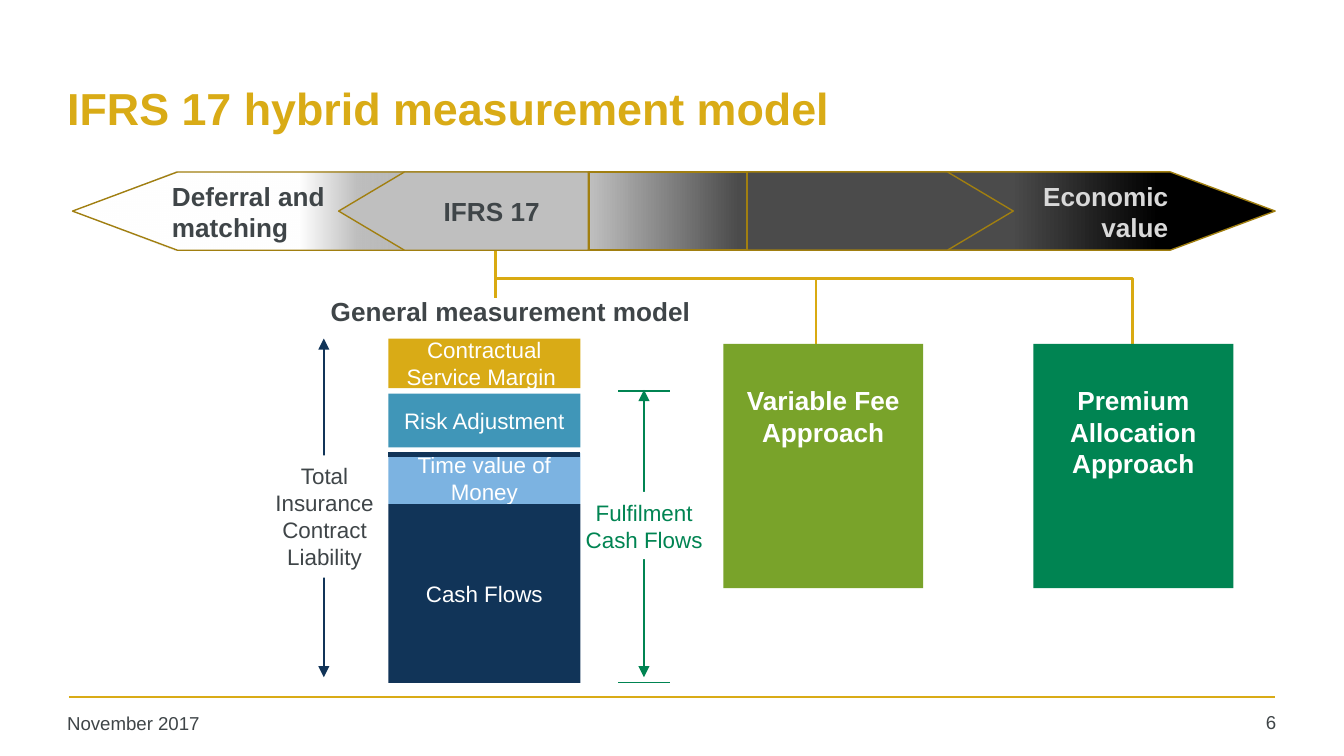
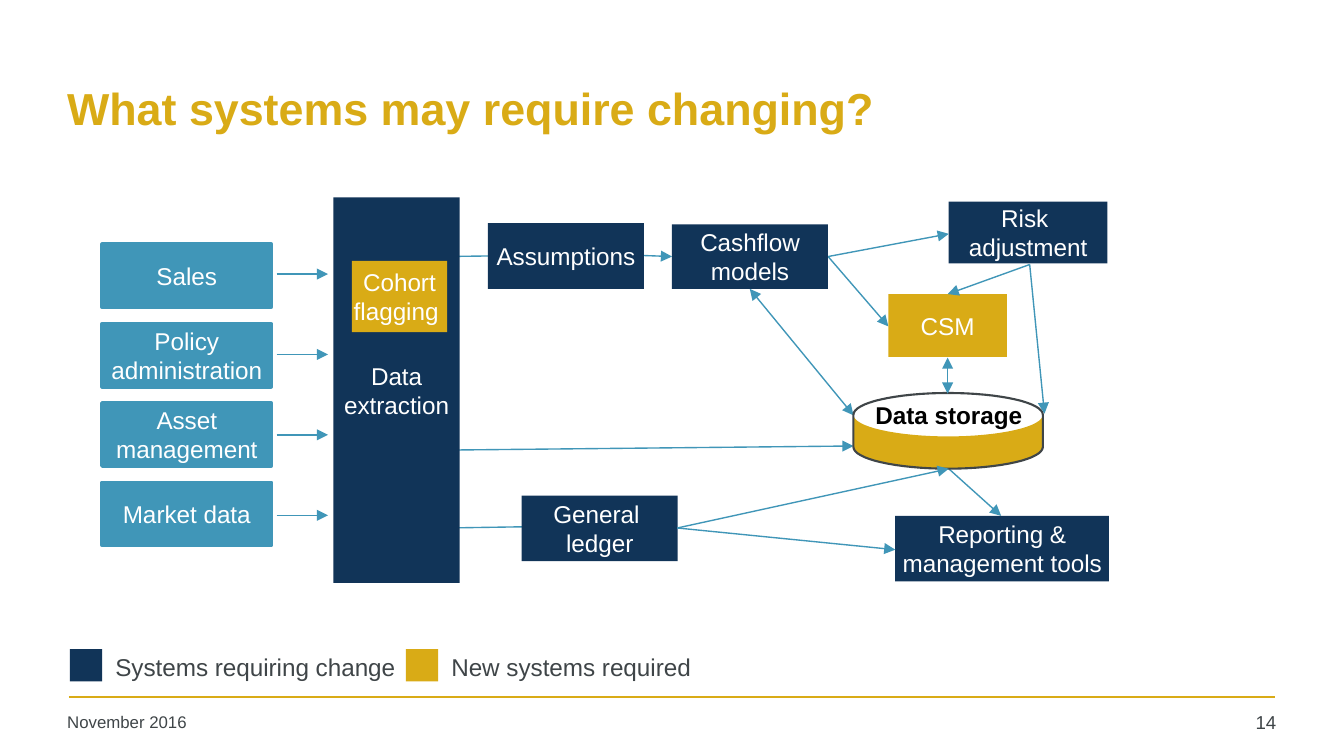
import math
from dataclasses import dataclass
from typing import Optional

from lxml import etree
from pptx import Presentation
from pptx.dml.color import RGBColor
from pptx.enum.shapes import MSO_CONNECTOR, MSO_SHAPE
from pptx.enum.text import MSO_ANCHOR, PP_ALIGN
from pptx.oxml.ns import qn
from pptx.util import Cm, Pt

RECT, PLATE = MSO_SHAPE.RECTANGLE, MSO_SHAPE.PENTAGON
STRAIGHT, ELBOW = MSO_CONNECTOR.STRAIGHT, MSO_CONNECTOR.ELBOW
LEFT, CENTER, RIGHT = PP_ALIGN.LEFT, PP_ALIGN.CENTER, PP_ALIGN.RIGHT
TOP, MIDDLE = MSO_ANCHOR.TOP, MSO_ANCHOR.MIDDLE

GOLD = RGBColor(0xD9, 0xAB, 0x16)
BRANCH_GOLD = RGBColor(0xD9, 0xAA, 0x11)
DARK_GOLD = RGBColor(0xA1, 0x7F, 0x10)
NAVY = RGBColor(0x11, 0x34, 0x58)
BLUE = RGBColor(0x40, 0x96, 0xB8)
LIGHT_BLUE = RGBColor(0x7C, 0xB3, 0xE1)
LIME = RGBColor(0x79, 0xA3, 0x2A)
GREEN = RGBColor(0x00, 0x84, 0x52)
SLATE = RGBColor(0x3F, 0x45, 0x48)
CHARCOAL = RGBColor(0x4B, 0x4B, 0x4B)
GREY = RGBColor(0x80, 0x80, 0x80)
SILVER = RGBColor(0xBF, 0xBF, 0xBF)
PALE_GREY = RGBColor(0xD9, 0xD9, 0xD9)
WHITE = RGBColor(0xFF, 0xFF, 0xFF)
BLACK = RGBColor(0x00, 0x00, 0x00)

FONT = "Arial"


@dataclass(frozen=True)
class Style:
    """Text look; insets are left, top, right, bottom in cm."""
    size: float
    color: RGBColor
    bold: bool = False
    align: PP_ALIGN = CENTER
    anchor: MSO_ANCHOR = TOP
    insets: tuple = (0.25, 0.13, 0.25, 0.13)


@dataclass(frozen=True)
class Box:
    """A rectangle or, without a fill, a text box; lengths in cm."""
    left: float
    top: float
    width: float
    height: float
    text: str = ""
    style: Optional[Style] = None
    fill: Optional[RGBColor] = None
    line: Optional[RGBColor] = None


@dataclass(frozen=True)
class Link:
    """A straight line in cm, with optional arrowheads."""
    x1: float
    y1: float
    x2: float
    y2: float
    color: RGBColor = BLUE
    weight: float = 0.75
    head: bool = False
    tail: bool = True


@dataclass(frozen=True)
class Plate:
    """One section of the spectrum arrow; a point of 0 gives a rectangle."""
    left: float
    width: float
    stops: tuple
    point: float = 0
    flipped: bool = False


EDGE = (0.18, 0.1, 0.18, 0.1)
FLUSH = (0, 0, 0, 0)
TITLE = Style(24, GOLD, True, LEFT, MIDDLE, EDGE)
PAGE = Style(10, SLATE, align=RIGHT, insets=EDGE)
HEADING = Style(14, SLATE, True)
HEADING_LEFT = Style(14, SLATE, True, LEFT)
HEADING_PALE = Style(14, PALE_GREY, True, RIGHT)
APPROACH = Style(14, WHITE, True)
LAYER = Style(12, WHITE, anchor=MIDDLE)
SYSTEM = Style(13, WHITE, anchor=MIDDLE, insets=FLUSH)
STORAGE = Style(13, BLACK, True, CENTER, MIDDLE, (0, 0, 0, 0.89))
LEGEND = Style(13, SLATE, align=LEFT)


def write(shape, text: str, style: Style) -> None:
    frame = shape.text_frame
    frame.text = text
    frame.word_wrap = True
    frame.vertical_anchor = style.anchor
    (frame.margin_left, frame.margin_top,
     frame.margin_right, frame.margin_bottom) = map(Cm, style.insets)
    for paragraph in frame.paragraphs:
        paragraph.alignment = style.align
        for run in paragraph.runs:
            run.font.name = FONT
            run.font.size = Pt(style.size)
            run.font.bold = style.bold
            run.font.color.rgb = style.color


def paint(shape, fill: Optional[RGBColor], line: Optional[RGBColor], weight: float) -> None:
    shape.shadow.inherit = False
    if fill is None:
        shape.fill.background()
    else:
        shape.fill.solid()
        shape.fill.fore_color.rgb = fill
    if line is None:
        shape.line.fill.background()
    else:
        shape.line.color.rgb = line
        shape.line.width = Pt(weight)


def draw_box(slide, box: Box) -> None:
    area = [Cm(v) for v in (box.left, box.top, box.width, box.height)]
    if box.fill is None:
        shape = slide.shapes.add_textbox(*area)
    else:
        shape = slide.shapes.add_shape(RECT, *area)
        paint(shape, box.fill, box.line, 2)
    if box.style:
        write(shape, box.text, box.style)


def draw_boxes(slide, boxes: list[Box]) -> None:
    for box in boxes:
        draw_box(slide, box)


def style_connector(connector, color: RGBColor, weight: float) -> None:
    connector.line.color.rgb = color
    connector.line.width = Pt(weight)
    etree.SubElement(connector._element.spPr, qn("a:effectLst"))


def draw_links(slide, links: list[Link]) -> None:
    for link in links:
        connector = slide.shapes.add_connector(
            STRAIGHT, Cm(link.x1), Cm(link.y1), Cm(link.x2), Cm(link.y2))
        style_connector(connector, link.color, link.weight)
        outline = connector.line._get_or_add_ln()
        for shown, tag in ((link.head, "a:headEnd"), (link.tail, "a:tailEnd")):
            if shown:
                etree.SubElement(outline, qn(tag), type="triangle")


def draw_branch(slide, x1: float, y1: float, x2: float, y2: float, bend: int) -> None:
    """Elbow that leaves downwards, runs across and goes down again."""
    cx, cy = (x1 + x2) / 2, (y1 + y2) / 2
    dx, dy = (y2 - y1) / 2, (x2 - x1) / 2
    connector = slide.shapes.add_connector(
        ELBOW, Cm(cx + dx), Cm(cy - dy), Cm(cx - dx), Cm(cy + dy))
    style_connector(connector, BRANCH_GOLD, 1.5)
    properties = connector._element.spPr
    properties.find(qn("a:xfrm")).set("rot", str(270 * 60000))
    adjustments = properties.find(qn("a:prstGeom")).find(qn("a:avLst"))
    etree.SubElement(adjustments, qn("a:gd"), name="adj1", fmla=f"val {bend}")


def set_gradient(shape, stops: tuple) -> None:
    """Each stop is position, colour and opacity, both in percent."""
    shape.fill.gradient()
    shape.fill.gradient_angle = 180
    stop_list = shape._element.spPr.find(".//" + qn("a:gsLst"))
    for default_stop in list(stop_list):
        stop_list.remove(default_stop)
    for position, color, opacity in stops:
        stop = etree.SubElement(stop_list, qn("a:gs"), pos=str(position * 1000))
        rgb = etree.SubElement(stop, qn("a:srgbClr"), val=str(color))
        if opacity < 100:
            etree.SubElement(rgb, qn("a:alpha"), val=str(opacity * 1000))


def draw_plate(slide, plate: Plate) -> None:
    shape = slide.shapes.add_shape(PLATE if plate.point else RECT, Cm(plate.left),
                                   Cm(3.25), Cm(plate.width), Cm(1.48))
    paint(shape, plate.stops[0][1], DARK_GOLD, 0.75)
    if len(plate.stops) > 1:
        set_gradient(shape, plate.stops)
    if plate.point:
        shape.adjustments[0] = plate.point
    if plate.flipped:
        shape.rotation = 180


def draw_drum(slide) -> None:
    """Data storage cylinder: a filled front and an outline around it all."""
    cx, rx, ry, rim, base = 17.92, 1.79, 0.41, 7.84, 8.45
    steps = 32

    def arc(cy: float, start: float, end: float) -> list:
        angles = [start + (end - start) * i / steps for i in range(steps + 1)]
        return [(Cm(cx + rx * math.cos(a)), Cm(cy + ry * math.sin(a))) for a in angles]

    front = arc(base, math.pi, 0)
    for points, fill, line in ((front + arc(rim, 0, math.pi), GOLD, None),
                               (arc(rim, 0, -math.pi) + front, None, SLATE)):
        builder = slide.shapes.build_freeform(*points[0])
        builder.add_line_segments(points[1:], close=True)
        paint(builder.convert_to_shape(), fill, line, 1.13)
    draw_box(slide, Box(16.23, 7.47, 3.4, 1.65, "Data storage", STORAGE))


def add_page(deck, title: str, date: str, date_size: float, number: str):
    slide = deck.slides.add_slide(deck.slide_layouts[6])
    draw_links(slide, [Link(1.3, 13.18, 24.1, 13.18, GOLD, 1, tail=False)])
    draw_boxes(slide, [
        Box(1.09, 0.84, 23.04, 2.39, title, TITLE),
        Box(1.09, 13.36, 5.59, 0.69, date, Style(date_size, SLATE, align=LEFT, insets=EDGE)),
        Box(22.5, 13.34, 1.8, 0.71, number, PAGE),
    ])
    return slide


def build_measurement_model(deck) -> None:
    slide = add_page(deck, "IFRS 17 hybrid measurement model", "November 2017", 10, "6")
    draw_links(slide, [Link(9.37, 4.72, 9.37, 5.64, BRANCH_GOLD, 1.5, tail=False),
                       Link(15.42, 5.28, 15.42, 6.58, BRANCH_GOLD, 1.5, tail=False)])
    draw_branch(slide, 9.37, 4.72, 21.41, 6.5, 30800)

    for plate in (
        Plate(11.13, 2.99, ((5, CHARCOAL, 100), (100, SILVER, 100))),
        Plate(1.37, 9.76, ((44, WHITE, 100), (55, SILVER, 100), (100, GREY, 50)), 1.34, True),
        Plate(14.12, 9.98, ((22, BLACK, 100), (50, CHARCOAL, 100), (100, CHARCOAL, 100)), 1.34),
        Plate(6.4, 4.72, ((0, SILVER, 100),), 0.84, True),
        Plate(14.12, 5.03, ((0, CHARCOAL, 100),), 0.84),
    ):
        draw_plate(slide, plate)
    draw_boxes(slide, [
        Box(3, 3.28, 4.98, 1.45, "Deferral and matching", HEADING_LEFT),
        Box(7.24, 3.56, 4.11, 0.86, "IFRS 17", HEADING),
        Box(18.85, 3.28, 3.48, 1.45, "Economic value", HEADING_PALE),
        Box(5.99, 5.46, 7.32, 0.86, "General measurement model", HEADING),
    ])

    for left, fill, approach in ((13.67, LIME, "Variable Fee Approach"),
                                 (19.53, GREEN, "Premium Allocation Approach")):
        draw_boxes(slide, [Box(left, 6.5, 3.78, 4.62, fill=fill),
                           Box(left, 7.14, 3.78, 2.06, approach, APPROACH)])

    draw_links(slide, [Link(12.17, 7.37, 12.17, 12.8, GREEN, head=True)])
    draw_links(slide, [Link(11.68, y, 12.67, y, GREEN, 1, tail=False) for y in (7.39, 12.9)])
    draw_links(slide, [Link(6.12, 6.4, 6.12, 12.8, NAVY, head=True)])
    draw_boxes(slide, [
        Box(4.65, 8.61, 2.97, 2.31, "Total Insurance Contract Liability",
            Style(12, SLATE), WHITE),
        Box(10.69, 9.3, 2.97, 1.27, "Fulfilment Cash Flows", Style(12, GREEN), WHITE),
    ])

    for top, height, fill, layer in (
        (6.4, 0.94, GOLD, "Contractual Service Margin "),
        (7.44, 1.02, BLUE, "Risk Adjustment"),
        (8.56, 0.97, LIGHT_BLUE, "Time value of Money"),
        (9.53, 3.38, NAVY, "Cash Flows"),
    ):
        draw_box(slide, Box(7.34, top, 3.63, height, layer, LAYER, fill))
    draw_links(slide, [Link(7.34, 8.59, 10.97, 8.59, NAVY, 2.25, tail=False)])


def build_systems(deck) -> None:
    slide = add_page(deck, "What systems may require changing?", "November 2016", 9, "14")
    draw_links(slide, [
        Link(8.43, 9.98, 11.66, 9.93),
        Link(8.2, 8.51, 16.13, 8.43),
        Link(17.93, 8.86, 18.92, 9.75),
        Link(16.13, 7.85, 14.17, 5.46, head=True),
        Link(12.17, 4.83, 12.7, 4.85),
        Link(8.38, 4.85, 9.86, 4.83),
        Link(15.65, 4.85, 16.79, 6.17),
    ])

    sources = ("Sales", "Policy\nadministration", "Asset management", "Market data")
    for row, source in enumerate(sources):
        draw_box(slide, Box(1.93, 4.62 + 1.5 * row, 3.2, 1.19, source, SYSTEM, BLUE, BLUE))
        arrow_y = 5.18 + 1.52 * row
        draw_links(slide, [Link(5.23, arrow_y, 6.2, arrow_y)])

    draw_drum(slide)
    draw_boxes(slide, [
        Box(6.3, 3.73, 2.39, 7.29, "Data extraction", SYSTEM, NAVY),
        Box(6.65, 4.93, 1.8, 1.35, "Cohort flagging ", SYSTEM, GOLD),
        Box(9.22, 4.22, 2.95, 1.24, "Assumptions", SYSTEM, NAVY),
        Box(12.7, 4.24, 2.95, 1.22, "Cashflow models", SYSTEM, NAVY),
        Box(17.93, 3.81, 3, 1.17, "Risk \nadjustment", SYSTEM, NAVY),
        Box(16.79, 5.56, 2.24, 1.19, "CSM", SYSTEM, GOLD),
        Box(9.86, 9.37, 2.95, 1.24, "General \nledger", SYSTEM, NAVY),
        Box(16.92, 9.75, 4.04, 1.24, "Reporting & management tools", SYSTEM, NAVY),
    ])
    draw_links(slide, [
        Link(17.91, 6.76, 17.91, 7.44, head=True),
        Link(12.8, 9.98, 17.93, 8.86),
        Link(15.65, 4.85, 17.93, 4.42),
        Link(12.8, 9.98, 16.92, 10.39),
        Link(19.46, 5, 19.74, 7.82),
        Link(19.46, 5, 17.91, 5.56),
    ])

    for left, fill, meaning in ((1.32, NAVY, "Systems requiring change"),
                                (7.67, GOLD, "New systems required")):
        draw_boxes(slide, [Box(left, 12.27, 0.61, 0.61, fill=fill),
                           Box(left + 0.61, 12.19, 6.2, 0.81, meaning, LEGEND)])


def main() -> None:
    deck = Presentation()
    deck.slide_width, deck.slide_height = Cm(25.4), Cm(14.29)
    build_measurement_model(deck)
    build_systems(deck)
    deck.save("out.pptx")


if __name__ == "__main__":
    main()
